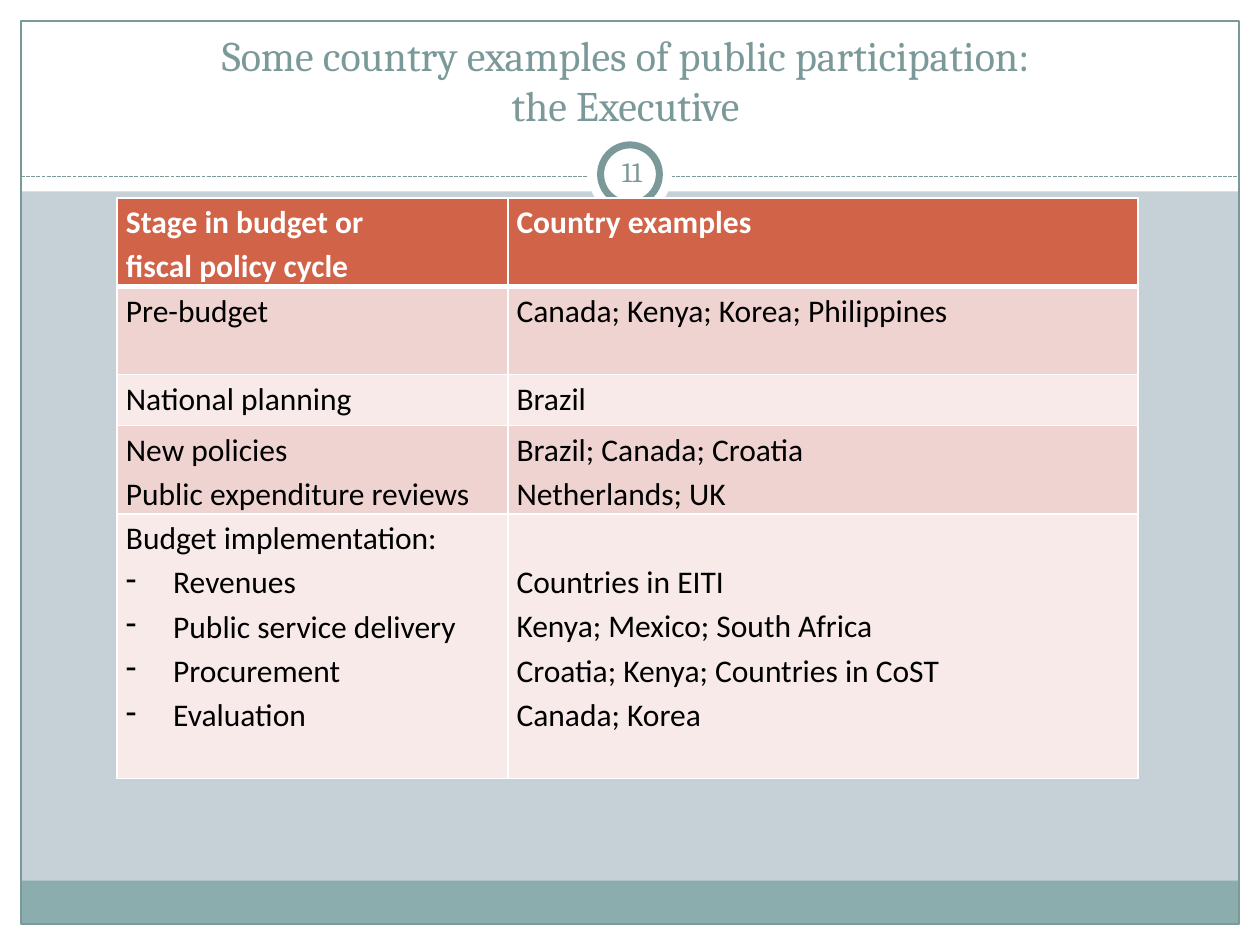
from lxml.etree import SubElement as Sub
from pptx import Presentation as Deck
from pptx.dml.color import RGBColor as Rgb
from pptx.enum.dml import MSO_LINE as Dash
from pptx.enum.shapes import MSO_CONNECTOR as Conn, MSO_SHAPE as Shape
from pptx.enum.text import MSO_ANCHOR as Anchor, MSO_AUTO_SIZE as Auto, PP_ALIGN as Align
from pptx.oxml.ns import qn
from pptx.util import Inches, Pt

COLS, ROWS = 60, 45
UNIT = Inches(10) / COLS
INK = {
    "back": "C5D1D7", "white": "FFFFFF", "band": "8CADAE", "teal": "7C999A",
    "head": "D16349", "dark": "EED3D0", "pale": "F7EAE9", "black": "000000",
}
WIDTHS = [18.6, 30]
HEIGHTS = [4.2, 4.2, 2.43, 4.2, 12.6]
LINE = 2.1
INDENT = 2.25
CELLS = [
    (["Stage in budget or", "fiscal policy cycle"], ["Country examples"]),
    (["Pre-budget"], ["Canada; Kenya; Korea; Philippines"]),
    (["National planning"], ["Brazil"]),
    (["New policies", "Public expenditure reviews"],
     ["Brazil; Canada; Croatia", "Netherlands; UK"]),
    (["Budget implementation:", "- Revenues", "- Public service delivery",
      "- Procurement", "- Evaluation"],
     ["Countries in EITI", "Kenya; Mexico; South Africa",
      "Croatia; Kenya; Countries in CoST", "Canada; Korea"]),
]


def grid(*spans):
    return [round(span * UNIT) for span in spans]


def ink(name):
    return Rgb.from_string(INK[name])


def apply(thing, form):
    for key, value in form.items():
        setattr(thing, key, value)


def style(part, name, size, tint, bold=False):
    apply(part.font, {"name": name, "size": Pt(size), "bold": bold})
    part.font.color.rgb = ink(tint)


def stroke(line, width):
    line.color.rgb = ink("teal")
    line.width = Pt(width)


def panel(slide, spot, fill=None, width=0, kind=Shape.RECTANGLE):
    shape = slide.shapes.add_shape(kind, *grid(*spot))
    shape.shadow.inherit = False
    if fill:
        shape.fill.solid()
        shape.fill.fore_color.rgb = ink(fill)
    else:
        shape.fill.background()
    if width:
        stroke(shape.line, width)
    else:
        shape.line.fill.background()


def rule(slide, row):
    line = slide.shapes.add_connector(Conn.STRAIGHT, *grid(1, row, COLS - 1, row))
    stroke(line.line, 0.75)
    line.line.dash_style = Dash.SQUARE_DOT
    Sub(line._element.spPr, qn("a:effectLst"))


def frame(slide):
    for spot in ((0, ROWS - 1, COLS, 1), (0, 0, COLS, 9.12),
                 (0, 0, 1, ROWS), (COLS - 1, 0, 1, ROWS)):
        panel(slide, spot, "white")
    panel(slide, (1, 41.94, COLS - 2, 2.06), "band")
    panel(slide, (1, 1, COLS - 2, ROWS - 2), width=0.75)
    rule(slide, 8.4)
    panel(slide, (28, 6.3, 4, 4), "white", kind=Shape.OVAL)
    panel(slide, (28.6, 6.9, 2.8, 2.8), "white", 4, Shape.OVAL)


def label(shape, spot, text, size, anchor):
    apply(shape, dict(zip(("left", "top", "width", "height"), grid(*spot))))
    body = shape.text_frame
    edge = Inches(0.05)
    apply(body, {"text": text, "word_wrap": True, "auto_size": Auto.NONE,
                 "vertical_anchor": anchor, "margin_left": edge, "margin_right": edge,
                 "margin_top": edge, "margin_bottom": edge})
    para = body.paragraphs[0]
    para.alignment = Align.CENTER
    for run in para.runs:
        style(run, "Cambria", size, "teal")


def border(cell, base):
    props = cell._tc.get_or_add_tcPr()
    for side in "LRTB":
        width = base if side == "B" else 1
        line = Sub(props, qn("a:ln" + side), w=str(Pt(width)))
        Sub(Sub(line, qn("a:solidFill")), qn("a:srgbClr"), val=INK["white"])


def bullet(para):
    props = para._p.get_or_add_pPr()
    shift = grid(INDENT)[0]
    props.set("marL", str(shift))
    props.set("indent", str(-shift))
    Sub(props, qn("a:buChar"), char="-")


def write(cell, lines, tint, bold, skip):
    edge = Inches(0.07)
    apply(cell, {"margin_left": edge, "margin_right": edge,
                 "margin_top": grid(skip)[0], "margin_bottom": 0})
    body = cell.text_frame
    for spot, text in enumerate(lines):
        para = body.add_paragraph() if spot else body.paragraphs[0]
        para.line_spacing = 1.15
        if text.startswith("- "):
            bullet(para)
        run = para.add_run()
        run.text = text.removeprefix("- ")
        style(run, "Calibri", 18, tint, bold)


def chart(slide):
    spot = grid(5.58, 9.42, sum(WIDTHS), sum(HEIGHTS))
    table = slide.shapes.add_table(len(CELLS), len(WIDTHS), *spot).table
    for col, width in zip(table.columns, grid(*WIDTHS)):
        col.width = width
    for row, height in zip(table.rows, grid(*HEIGHTS)):
        row.height = height
    for r, pair in enumerate(CELLS):
        top = r == 0
        fill = "head" if top else ("pale", "dark")[r % 2]
        for c, lines in enumerate(pair):
            cell = table.cell(r, c)
            skip = LINE if c and pair[0][-1].startswith("- ") else 0
            border(cell, 3 if top else 1)
            cell.fill.solid()
            cell.fill.fore_color.rgb = ink(fill)
            write(cell, lines, "white" if top else "black", top, skip)


def main():
    deck = Deck()
    apply(deck, dict(zip(("slide_width", "slide_height"), grid(COLS, ROWS))))
    slide = deck.slides.add_slide(deck.slide_layouts[5])
    slide.background.fill.solid()
    slide.background.fill.fore_color.rgb = ink("back")
    frame(slide)
    title = slide.shapes.title
    slide.shapes._spTree.append(title._element)
    label(title, (2, 1.5, 56, 5),
          "Some country examples of public participation: \vthe Executive ",
          24, Anchor.BOTTOM)
    chart(slide)
    spot = (28.6, 6.7, 3, 2.9)
    label(slide.shapes.add_textbox(*grid(*spot)), spot, "11", 16, Anchor.MIDDLE)
    deck.save("out.pptx")


if __name__ == "__main__":
    main()
